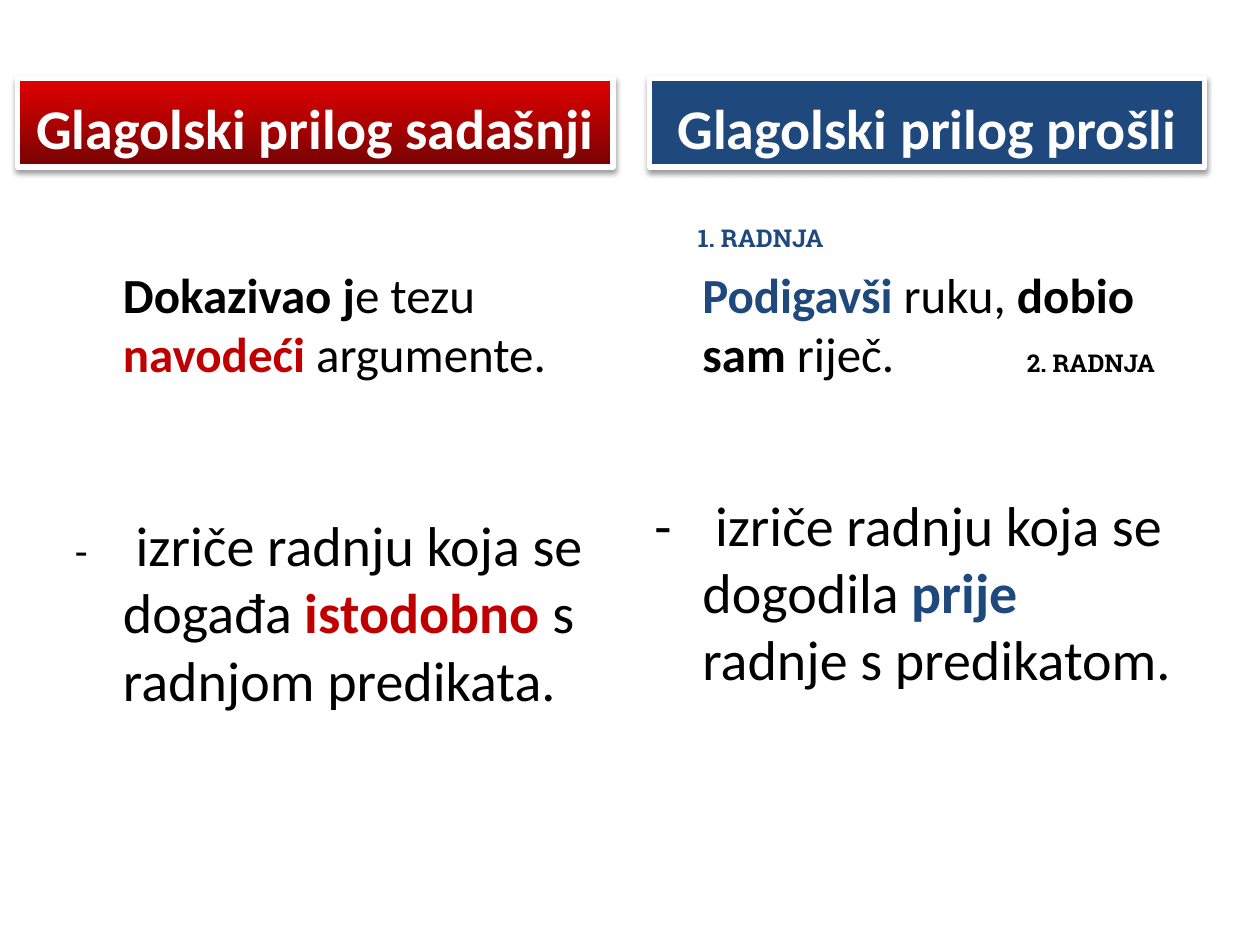
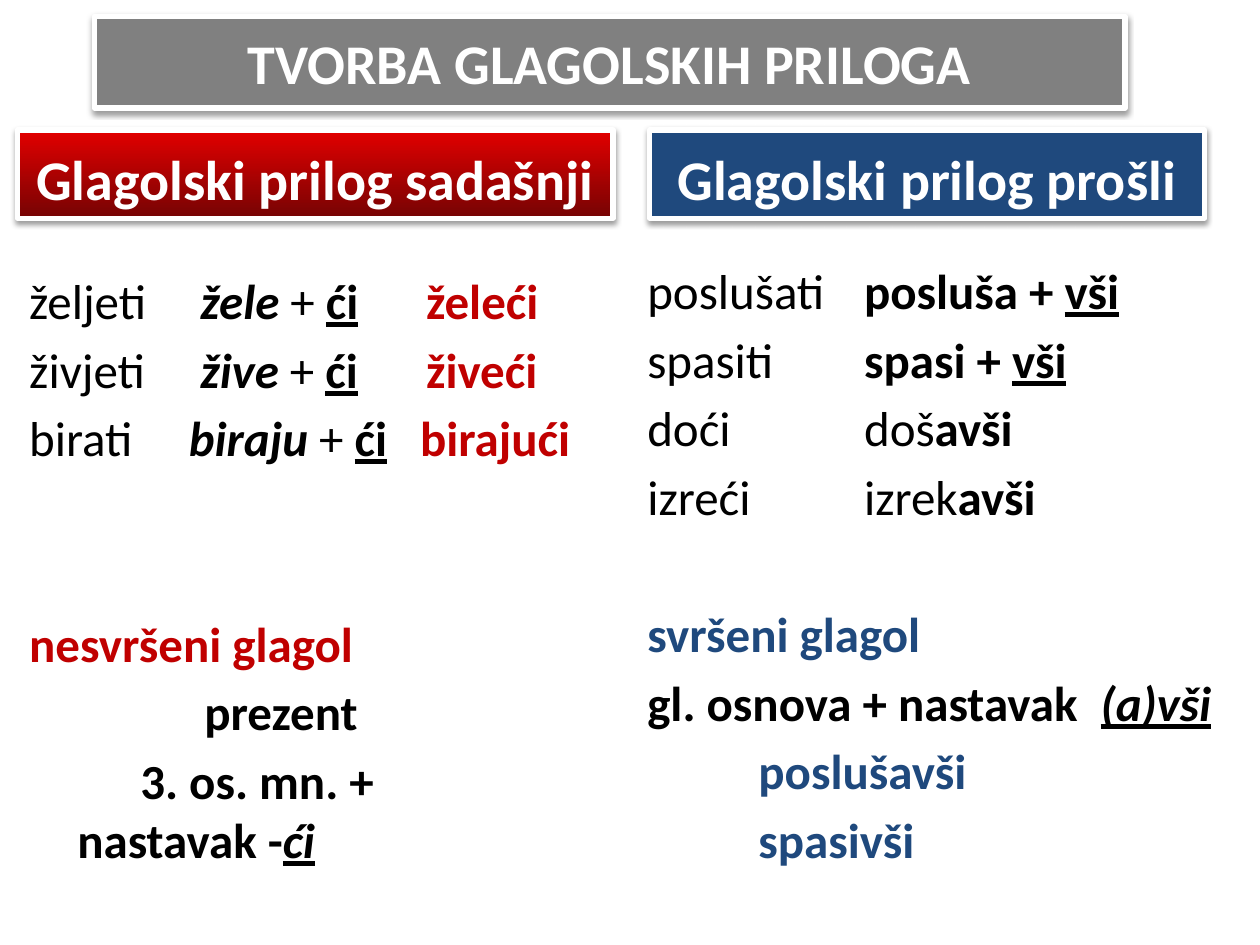
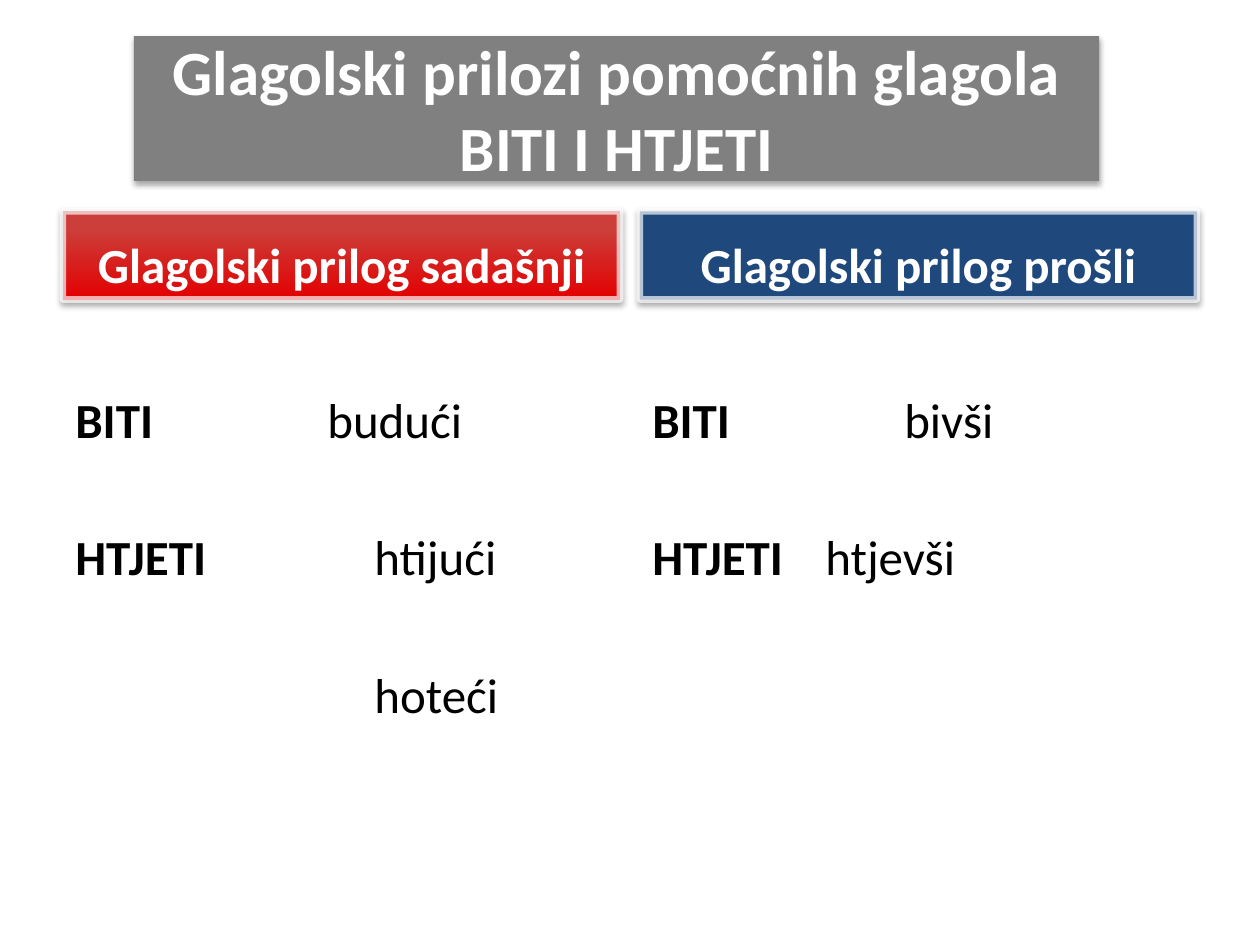
"""Builds three slides on the Croatian verbal adverbs, present and past."""
import pptx
import pptx.dml.color
import pptx.enum.shapes
import pptx.enum.text
import pptx.oxml.ns
import pptx.util
from lxml import etree

Cm, Pt = pptx.util.Cm, pptx.util.Pt
RED, BLUE, BLACK, WHITE, GRAY = "C00000", "1F497D", "000000", "FFFFFF", "808080"
DEEP_RED = ((0, "E30000"), (1, "760303"))
LIGHT_RED = ((0.2, "CB3E3A"), (1, "E30000"))
LINE_GAP, WIDE_GAP = 5.5, 45
PRESENT, PAST = "Glagolski prilog sadašnji", "Glagolski prilog prošli"
FRAMED = {"size": 32, "line": 3, "shade": 38}
FAINT = {"size": 28, "line": 3.75, "line_alpha": 68, "shade": 35}


def para(*runs, **layout):
    return {"runs": runs, **layout}


def row(head, column, *runs, style="", **layout):
    return para((head + "\t", style), *runs, left=column, first=-column, **layout)


def verb(infinitive, stem, adverb, stem_column=3.45, adverb_column=8):
    return row(infinitive, stem_column, (stem + " ", "bi"), ("+ ",), ("ći", "bu"),
               ("\t" + adverb, "b", RED), tab_step=adverb_column - stem_column)


def past_verb(infinitive, *forms):
    return row(infinitive, 4.37, *forms)


def meaning(*runs, **layout):
    return para(*runs, left=0.97, first=-0.97, size=32, **layout)


SLIDES = [
    {
        "bands": [
            (PRESENT, (0.35, 1.59, 12.01, 1.78), DEEP_RED, FRAMED),
            (PAST, (13.1, 1.59, 11.18, 1.78), BLUE, FRAMED),
        ],
        "bodies": [
            ((1.26, 4.17, 11.18, 14.2), 1.16, [
                para(("Dokazivao j", "b"), ("e tezu ",), ("navodeći ", "b", RED),
                     ("argumente.",), left=0.97),
                meaning((" izriče radnju koja se događa ",), ("istodobno ", "b", RED),
                        ("s radnjom predikata.",), gap=73.5, dash_size=24),
            ]),
            ((12.94, 4.17, 11.18, 14.05), 1.16, [
                para(("Podigavši ", "b", BLUE), ("ruku, ",), ("dobio sam", "b"),
                     (" riječ.",), left=0.97),
                meaning((" izriče radnju koja se dogodila ",), ("prije\n", "b", BLUE),
                        ("radnje s predikatom.",), gap=62, dash_size=32),
            ]),
        ],
        "labels": [("1. RADNJA", 14.07, 4.49, BLUE), ("2. RADNJA", 20.7, 7.01, BLACK)],
    },
    {
        "bands": [
            ("TVORBA GLAGOLSKIH PRILOGA", (1.9, 0.33, 20.78, 1.85), GRAY,
             {**FRAMED, "middle": True}),
            (PRESENT, (0.35, 2.62, 12.01, 1.78), DEEP_RED, FRAMED),
            (PAST, (13.1, 2.62, 11.18, 1.78), BLUE, FRAMED),
        ],
        "bodies": [
            ((0.34, 5.33, 12.32, 12.4), 0.13, [
                verb("željeti", "žele", "želeći"),
                verb("živjeti", "žive", "živeći"),
                verb("birati", "biraju", "birajući", 3.22, 7.88),
                para(("nesvršeni glagol", "b", RED), gap=84),
                para(("prezent", "b"), left=3.53),
                para(("3. os. mn. +", "b"), left=2.24),
                para(("nastavak -", "b"), ("ći", "biu"), left=0.97, gap=0),
            ]),
            ((12.8, 5.13, 12.65, 13.94), 0.13, [
                past_verb("poslušati", ("posluša + ", "b"), ("vši", "bu")),
                past_verb("spasiti", ("spasi + ", "b"), ("vši", "bu")),
                past_verb("doći", ("doš",), ("avši", "b")),
                past_verb("izreći", ("izrek",), ("avši", "b")),
                para(("svršeni glagol", "b", BLUE), gap=WIDE_GAP),
                row("gl. osnova + nastavak", 9.14, ("(a)vši", "biu"), style="b"),
                para(("poslušavši", "b", BLUE), left=2.24),
                para(("spasivši", "b", BLUE), left=2.24),
            ]),
        ],
    },
    {
        "bands": [
            ("Glagolski prilozi pomoćnih glagola BITI I HTJETI",
             (2.7, 0.73, 19.46, 2.92), GRAY, {"size": 36, "shade": 35, "middle": True}),
            (PRESENT, (1.27, 4.26, 11.23, 1.78), LIGHT_RED, FAINT),
            (PAST, (12.9, 4.26, 11.23, 1.78), BLUE, FAINT),
        ],
        "bodies": [
            ((1.27, 7.72, 11.23, 9.3), 0.13, [
                row("BITI", 5.08, ("budući",), style="b"),
                row("HTJETI", 6.03, ("htijući",), style="b", gap=WIDE_GAP),
                para(("hoteći",), left=6.03, gap=WIDE_GAP),
            ]),
            ((12.9, 7.72, 11.23, 8.28), 0.13, [
                row("BITI", 5.08, ("bivši",), style="b"),
                row("HTJETI", 3.49, ("htjevši",), style="b", gap=WIDE_GAP),
            ]),
        ],
    },
]


def rgb(value):
    return pptx.dml.color.RGBColor.from_string(value)


def add_xml(parent, tag, **attributes):
    child = etree.SubElement(parent, pptx.oxml.ns.qn(tag))
    for name, value in attributes.items():
        child.set(name, str(value))
    return child


def add_run(paragraph, text, style="", color=BLACK, size=28, font="Calibri"):
    run = paragraph.add_run()
    run.text = text
    run.font.name, run.font.size = font, Pt(size)
    run.font.color.rgb = rgb(color)
    run.font.bold, run.font.italic, run.font.underline = (key in style for key in "biu")


def add_shadow(band, alpha):
    band.shadow.inherit = False
    effects = band.element.spPr.find(pptx.oxml.ns.qn("a:effectLst"))
    outer = add_xml(effects, "a:outerShdw", blurRad=Pt(3.1), dist=Pt(1.7),
                    dir=5400000, algn="t", rotWithShape=0)
    shade = add_xml(outer, "a:srgbClr", val=BLACK)
    add_xml(shade, "a:alpha", val=alpha * 1000)


def add_band(slide, title, place, fill, size, shade, line=0, line_alpha=100, middle=False):
    band = slide.shapes.add_shape(pptx.enum.shapes.MSO_SHAPE.RECTANGLE, *map(Cm, place))
    if isinstance(fill, str):
        band.fill.solid()
        band.fill.fore_color.rgb = rgb(fill)
    else:
        band.fill.gradient()
        band.fill.gradient_angle = 270
        for stop, (position, color) in zip(band.fill.gradient_stops, fill):
            stop.position = position
            stop.color.rgb = rgb(color)
    if line:
        band.line.width = Pt(line)
        band.line.color.rgb = rgb(WHITE)
        for color in band.element.spPr.xpath("a:ln//a:srgbClr"):
            add_xml(color, "a:alpha", val=line_alpha * 1000)
    else:
        band.line.fill.background()
    add_shadow(band, shade)
    frame = band.text_frame
    frame.word_wrap = True
    anchors = pptx.enum.text.MSO_ANCHOR
    frame.vertical_anchor = anchors.MIDDLE if middle else anchors.BOTTOM
    frame.paragraphs[0].alignment = pptx.enum.text.PP_ALIGN.CENTER
    add_run(frame.paragraphs[0], title, "b", WHITE, size)


def fill_paragraph(paragraph, runs, is_first, left=0, first=0, size=28,
                   gap=LINE_GAP, tab_step=0, dash_size=0):
    paragraph.space_before = Pt(0 if is_first else gap)
    properties = paragraph._p.get_or_add_pPr()
    properties.set("marL", str(Cm(left)))
    properties.set("indent", str(Cm(first)))
    if tab_step:
        properties.set("defTabSz", str(Cm(tab_step)))
    if dash_size:
        add_run(paragraph, "-\t", size=dash_size)
    for text, *look in runs:
        add_run(paragraph, text.rstrip("\n"), *look, size=size)
        if text.endswith("\n"):
            paragraph.add_line_break()


def add_body(slide, place, top_margin, paragraphs):
    frame = slide.shapes.add_textbox(*map(Cm, place)).text_frame
    frame.word_wrap = True
    frame.margin_top = Cm(top_margin)
    for index, content in enumerate(paragraphs):
        paragraph = frame.add_paragraph() if index else frame.paragraphs[0]
        fill_paragraph(paragraph, is_first=index == 0, **content)


def add_label(slide, text, left, top, color):
    frame = slide.shapes.add_textbox(Cm(left), Cm(top), Cm(3.05), Cm(0.66)).text_frame
    frame.word_wrap = True
    frame.margin_left = frame.margin_right = frame.margin_top = frame.margin_bottom = 0
    add_run(frame.paragraphs[0], text, "b", color, 14, "Roboto Slab")


def main():
    deck = pptx.Presentation()
    deck.slide_width, deck.slide_height = Cm(25.4), Cm(19.05)
    for content in SLIDES:
        slide = deck.slides.add_slide(deck.slide_layouts[6])
        for title, place, fill, look in content["bands"]:
            add_band(slide, title, place, fill, **look)
        for body in content["bodies"]:
            add_body(slide, *body)
        for label in content.get("labels", []):
            add_label(slide, *label)
    deck.save("out.pptx")


if __name__ == "__main__":
    main()
